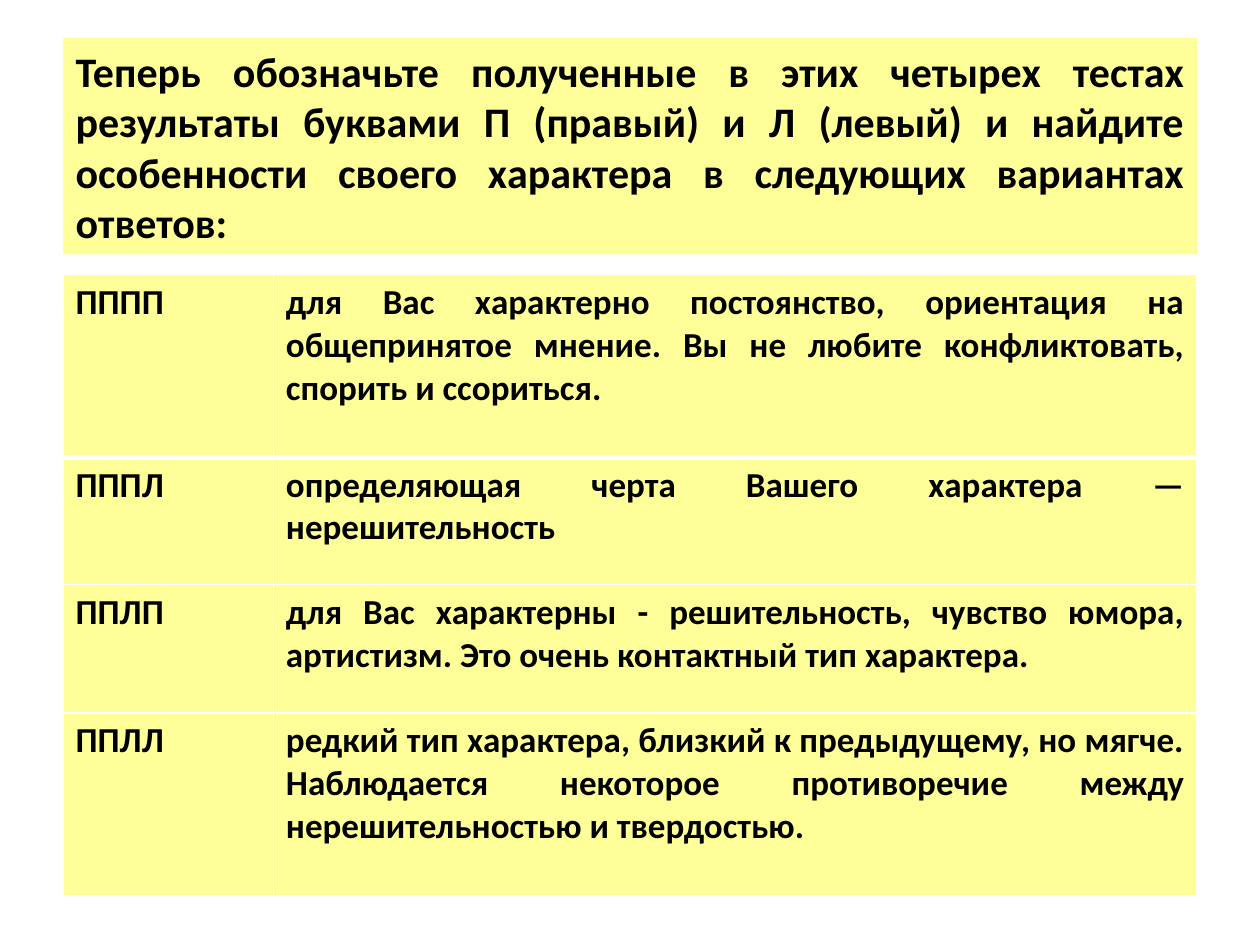
from dataclasses import dataclass

from lxml.etree import SubElement
from pptx import Presentation
from pptx.dml.color import RGBColor
from pptx.enum.text import MSO_ANCHOR, MSO_AUTO_SIZE, PP_ALIGN
from pptx.oxml.ns import qn
from pptx.util import Inches, Pt


@dataclass(frozen=True)
class Theme:
    font: str = "Calibri"
    text: str = "000000"
    panel: str = "FFFF99"
    border: str = "FFFFFF"
    title_size: int = 24
    table_size: int = 20
    border_width: int = 1
    first_row_border_width: int = 3


THEME = Theme()
LEFT, WIDTH = 0.5, 9
COLUMN_WIDTHS = (1.67, 7.33)
ROW_HEIGHTS = (1.45, 1.01, 1.02, 1.45)

TITLE = (
    "Теперь обозначьте полученные в этих четырех тестах результаты буквами "
    "П (правый) и Л (левый) и найдите особенности своего характера "
    "в следующих вариантах ответов:"
)
CHARACTER_TYPES = (
    ("ПППП", "для Вас характерно постоянство, ориентация на общепринятое мнение. "
             "Вы не любите конфликтовать, спорить и ссориться."),
    ("ПППЛ", "определяющая черта Вашего характера — нерешительность"),
    ("ППЛП", "для Вас характерны - решительность, чувство юмора, артистизм. "
             "Это очень контактный тип характера."),
    ("ППЛЛ", "редкий тип характера, близкий к предыдущему, но мягче. "
             "Наблюдается некоторое противоречие между нерешительностью и твердостью."),
)


def write_text(text_frame, text, *, size, bold=True, alignment=PP_ALIGN.JUSTIFY):
    text_frame.word_wrap = True
    paragraph = text_frame.paragraphs[0]
    paragraph.alignment = alignment
    run = paragraph.add_run()
    run.text = text
    run.font.name = THEME.font
    run.font.size = Pt(size)
    run.font.bold = bold
    run.font.color.rgb = RGBColor.from_string(THEME.text)


def fill_panel(target):
    target.fill.solid()
    target.fill.fore_color.rgb = RGBColor.from_string(THEME.panel)


def set_cell_borders(cell, top, bottom):
    """Draw the four edges; top and bottom are widths in points."""
    properties = cell._tc.get_or_add_tcPr()
    side = THEME.border_width
    for edge, width in (("lnL", side), ("lnR", side), ("lnT", top), ("lnB", bottom)):
        line = SubElement(properties, qn(f"a:{edge}"), w=str(Pt(width)))
        fill = SubElement(line, qn("a:solidFill"))
        SubElement(fill, qn("a:srgbClr"), val=THEME.border)


def add_title(slide):
    title = slide.shapes.title
    title.left, title.top = Inches(LEFT), Inches(0.3)
    title.width, title.height = Inches(WIDTH), Inches(1.72)
    fill_panel(title)
    title.text_frame.auto_size = MSO_AUTO_SIZE.NONE
    title.text_frame.vertical_anchor = MSO_ANCHOR.MIDDLE
    write_text(title.text_frame, TITLE, size=THEME.title_size)


def add_character_table(slide):
    table = slide.shapes.add_table(
        len(CHARACTER_TYPES), len(COLUMN_WIDTHS),
        Inches(LEFT), Inches(2.18), Inches(WIDTH), Inches(sum(ROW_HEIGHTS)),
    ).table
    for column, width in zip(table.columns, COLUMN_WIDTHS):
        column.width = Inches(width)
    for row, height in zip(table.rows, ROW_HEIGHTS):
        row.height = Inches(height)

    thin, thick = THEME.border_width, THEME.first_row_border_width
    edges = [thin, thick] + [thin] * (len(CHARACTER_TYPES) - 1)
    for row_index, texts in enumerate(CHARACTER_TYPES):
        for column_index, text in enumerate(texts):
            cell = table.cell(row_index, column_index)
            set_cell_borders(cell, top=edges[row_index], bottom=edges[row_index + 1])
            fill_panel(cell)
            write_text(cell.text_frame, text, size=THEME.table_size)


def main():
    presentation = Presentation()
    presentation.slide_width = Inches(10)
    presentation.slide_height = Inches(7.5)
    title_only_layout = presentation.slide_layouts[5]
    slide = presentation.slides.add_slide(title_only_layout)
    add_title(slide)
    add_character_table(slide)
    presentation.save("out.pptx")


if __name__ == "__main__":
    main()
